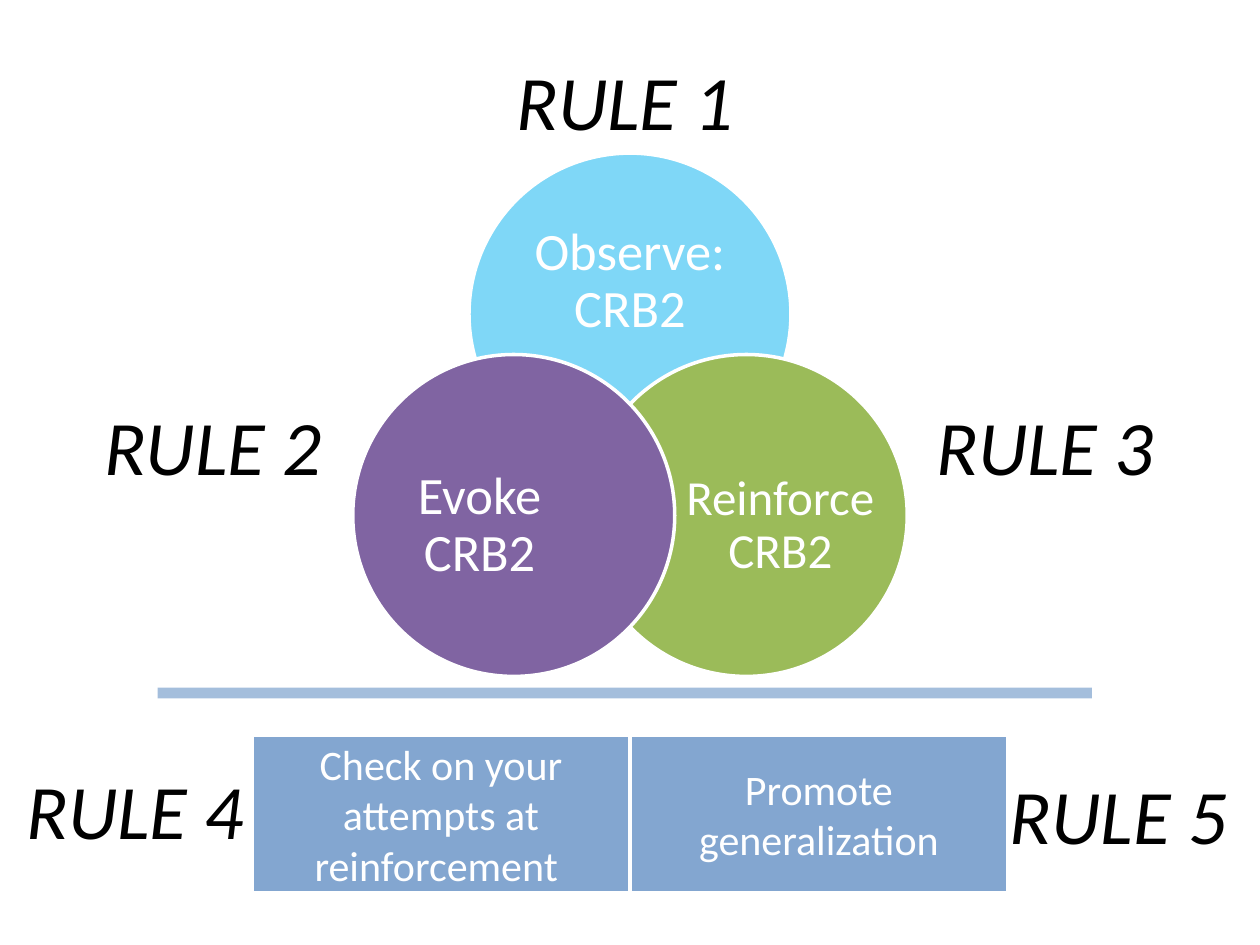
from math import cos, radians, sin

from lxml import etree
from pptx import Presentation
from pptx.dml.color import RGBColor
from pptx.enum.shapes import MSO_CONNECTOR, MSO_SHAPE
from pptx.enum.text import MSO_ANCHOR, MSO_AUTO_SIZE, PP_ALIGN
from pptx.oxml.ns import qn
from pptx.util import Pt

OVAL, RECT = MSO_SHAPE.OVAL, MSO_SHAPE.RECTANGLE
STRAIGHT = MSO_CONNECTOR.STRAIGHT
MIDDLE, TOP = MSO_ANCHOR.MIDDLE, MSO_ANCHOR.TOP
CENTER, LEFT = PP_ALIGN.CENTER, PP_ALIGN.LEFT
FIT_SHAPE = MSO_AUTO_SIZE.SHAPE_TO_FIT_TEXT

WHITE = RGBColor(0xFF, 0xFF, 0xFF)
BLACK = RGBColor(0x00, 0x00, 0x00)
SKY = RGBColor(0x00, 0xB0, 0xF0)
GREEN = RGBColor(0x9B, 0xBB, 0x59)
PURPLE = RGBColor(0x80, 0x64, 0xA2)
BLUE = RGBColor(0x4F, 0x81, 0xBD)
RULE_BLUE = RGBColor(0x4A, 0x7E, 0xBB)
FONT = "Calibri"

# text, angle around the centre, colour, opacity, size, insets (l, t, r, b)
CIRCLES = [
    ("Observe:\vCRB2", -90, SKY, 50, 30, (0, 5.5, 0, 42)),
    ("Reinforce\vCRB2", 30, GREEN, 100, 28, (39, 21, 0, 9)),
    ("Evoke\vCRB2", 150, PURPLE, 100, 30, (0, 21, 39, 9)),
]
VENN_X, VENN_Y, VENN_SPREAD, DIAMETER = 360, 256.2, 76.7, 184

BOXES = ["Check on your attempts at reinforcement ", "Promote generalization"]
BOX_X, BOX_Y, BOX_W, BOX_H = 144, 420, 216, 90

# label, left, top
LABELS = [
    ("RULE 4", 8, 432),
    ("RULE 5", 570, 435),
    ("RULE 1", 288, 27),
    ("RULE 2", 52.5, 224),
    ("RULE 3", 528, 224),
]
LABEL_W, LABEL_H = 232, 60.5


def write(shape, text, size, color=WHITE, italic=False, align=CENTER,
          anchor=MIDDLE, wrap=True, spacing=None, insets=(7.2, 3.6, 7.2, 3.6)):
    tf = shape.text_frame
    tf.word_wrap = wrap
    tf.vertical_anchor = anchor
    (tf.margin_left, tf.margin_top,
     tf.margin_right, tf.margin_bottom) = map(Pt, insets)
    p = tf.paragraphs[0]
    p.text = text
    p.alignment = align
    p.line_spacing = spacing
    for r in p.runs:
        r.font.name = FONT
        r.font.size = Pt(size)
        r.font.italic = italic
        r.font.color.rgb = color


def set_opacity(element, percent):
    """Make the first solid colour inside element partly transparent."""
    clr = next(element.iter(qn("a:srgbClr")))
    etree.SubElement(clr, qn("a:alpha")).set("val", str(percent * 1000))


def add_filled(slide, kind, x, y, w, h, color, opacity):
    sp = slide.shapes.add_shape(kind, Pt(x), Pt(y), Pt(w), Pt(h))
    sp.shadow.inherit = False
    sp.fill.solid()
    sp.fill.fore_color.rgb = color
    if opacity < 100:
        set_opacity(sp.fill._xPr, opacity)
    sp.line.color.rgb = WHITE
    sp.line.width = Pt(2)
    return sp


def add_divider(slide, x1, x2, y):
    line = slide.shapes.add_connector(STRAIGHT, Pt(x1), Pt(y), Pt(x2), Pt(y))
    line.line.color.rgb = RULE_BLUE
    line.line.width = Pt(6)
    props = line._element.spPr
    set_opacity(props, 50)
    etree.SubElement(props, qn("a:effectLst"))


def main():
    prs = Presentation()
    prs.slide_width, prs.slide_height = Pt(720), Pt(540)
    s = prs.slides.add_slide(prs.slide_layouts[6])

    for text, angle, color, opacity, size, insets in CIRCLES:
        x = VENN_X + VENN_SPREAD * cos(radians(angle)) - DIAMETER / 2
        y = VENN_Y + VENN_SPREAD * sin(radians(angle)) - DIAMETER / 2
        sp = add_filled(s, OVAL, x, y, DIAMETER, DIAMETER, color, opacity)
        write(sp, text, size, wrap=False, spacing=0.9, insets=insets)

    add_divider(s, 90, 624, 396)

    for i, text in enumerate(BOXES):
        sp = add_filled(s, RECT, BOX_X + i * BOX_W, BOX_Y, BOX_W, BOX_H, BLUE, 70)
        write(sp, text, 24)

    for text, x, y in LABELS:
        box = s.shapes.add_textbox(Pt(x), Pt(y), Pt(LABEL_W), Pt(LABEL_H))
        write(box, text, 44, color=BLACK, italic=True, align=LEFT, anchor=TOP)
        box.text_frame.auto_size = FIT_SHAPE

    prs.save("out.pptx")


if __name__ == "__main__":
    main()
